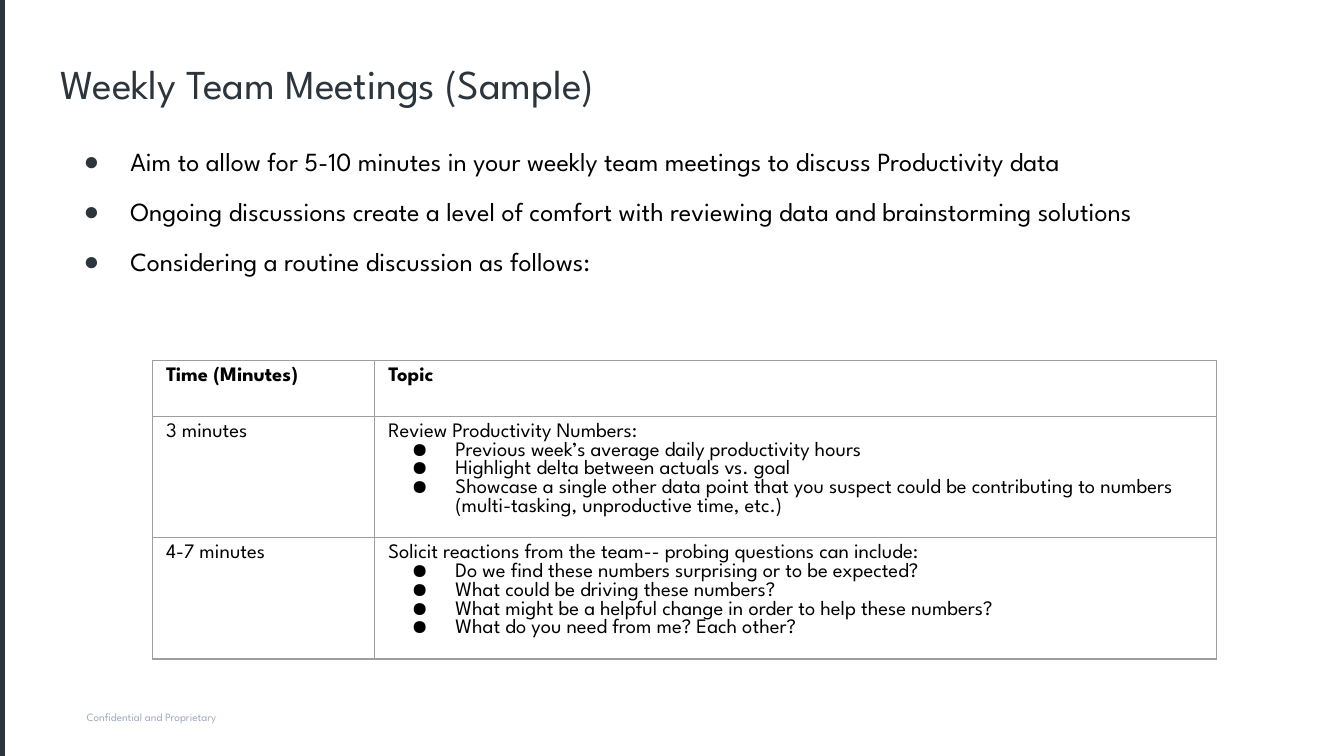
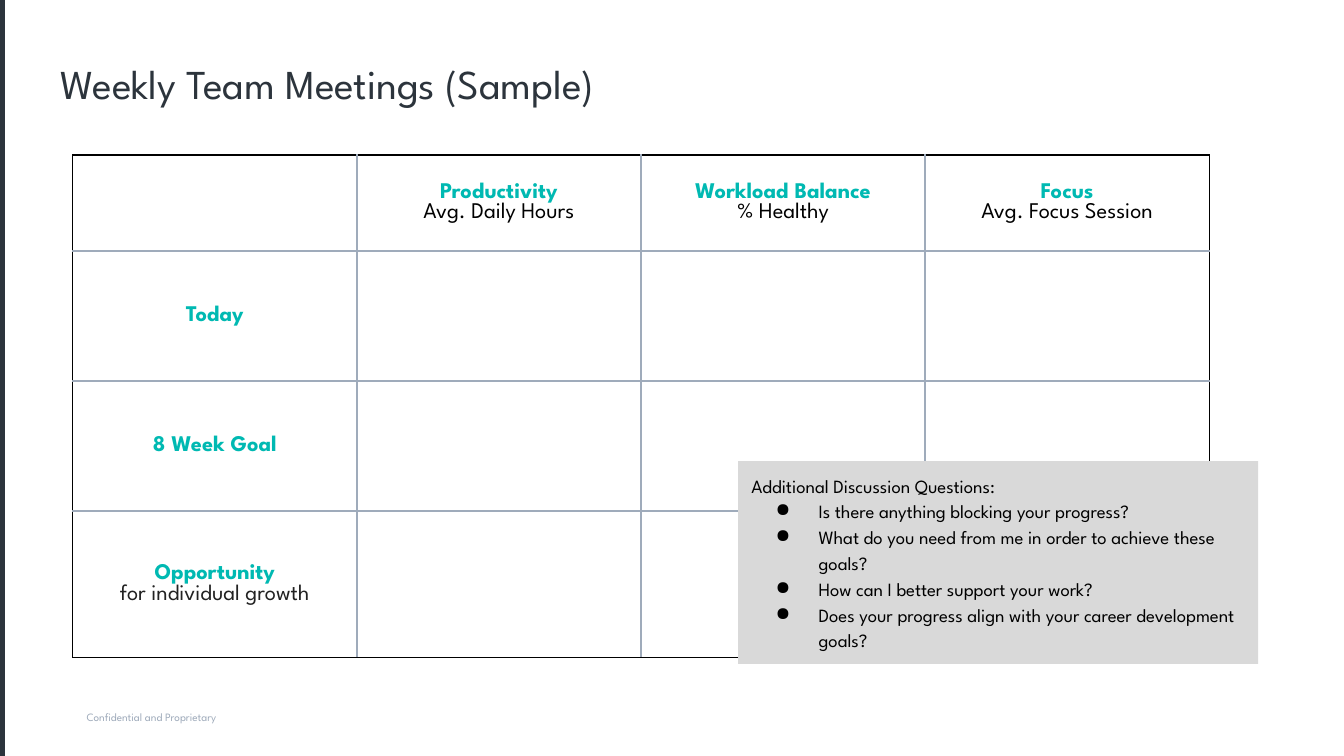
from dataclasses import dataclass

from lxml import etree
from pptx import Presentation
from pptx.dml.color import RGBColor
from pptx.enum import shapes, text
from pptx.oxml import ns
from pptx.util import Pt


@dataclass(frozen=True)
class Theme:
    font: str = "League Spartan"
    ink: str = "2C343C"
    black: str = "000000"
    soft: str = "222222"
    teal: str = "00B9B2"
    mist: str = "9FABBB"
    grey: str = "9E9E9E"
    panel: str = "D9D9D9"
    title: int = 22
    body: int = 14
    grid: int = 12
    cell: int = 11
    note: int = 10
    foot: int = 6


T = Theme()


def write(frame, lines, size, color, pads, hang=0, dot=T.black):
    """Fill a frame; lines that start with a bullet mark hang by the given indent."""
    frame.word_wrap = True
    for i, line in enumerate(lines):
        para = frame.paragraphs[0] if i == 0 else frame.add_paragraph()
        para.space_before = para.space_after = Pt(0)
        props = para._p.get_or_add_pPr()
        if line.startswith("●"):
            line = line[1:]
            props.set("marL", str(Pt(36)))
            props.set("indent", str(Pt(-hang)))
            tint = etree.SubElement(props, ns.qn("a:buClr"))
            etree.SubElement(tint, ns.qn("a:srgbClr"), val=dot)
            etree.SubElement(props, ns.qn("a:buChar"), char="●")
        else:
            props.set("marL", "0")
            props.set("indent", "0")
            etree.SubElement(props, ns.qn("a:buNone"))
        para.text = line
        para.font.name, para.font.size = T.font, Pt(size)
        para.font.color.rgb = RGBColor.from_string(color)
    (frame.margin_left, frame.margin_top,
     frame.margin_right, frame.margin_bottom) = map(Pt, pads)


def table(slide, left, top, cols, rows, edge):
    """Add a plain table; edge(row, col, side) gives each border's colour and width."""
    grid = slide.shapes.add_table(len(rows), len(cols), Pt(left), Pt(top),
                                  Pt(sum(cols)), Pt(sum(rows))).table
    grid.first_row = grid.horz_banding = False
    for c, wide in enumerate(cols):
        grid.columns[c].width = Pt(wide)
    for r, high in enumerate(rows):
        grid.rows[r].height = Pt(high)
        for c in range(len(cols)):
            props = grid.cell(r, c)._tc.get_or_add_tcPr()
            for side in "LRTB":
                color, width = edge(r, c, side)
                line = etree.SubElement(props, ns.qn(f"a:ln{side}"), w=str(Pt(width)))
                fill = etree.SubElement(line, ns.qn("a:solidFill"))
                etree.SubElement(fill, ns.qn("a:srgbClr"), val=color)
            grid.cell(r, c).fill.background()
    return grid


deck = Presentation()
deck.slide_width, deck.slide_height = Pt(720), Pt(405)
plan = deck.slides.add_slide(deck.slide_layouts[1])
goals = deck.slides.add_slide(deck.slide_layouts[5])

# Shared band and footer, kept on the master
band = plan.shapes.add_shape(shapes.MSO_SHAPE.RECTANGLE, Pt(0), Pt(0), Pt(2.7), Pt(405))
band.shadow.inherit = False
band.fill.solid()
band.fill.fore_color.rgb = RGBColor.from_string(T.ink)
band.line.fill.background()
foot = plan.shapes.add_textbox(Pt(41.4), Pt(377.5), Pt(160), Pt(18.7))
write(foot.text_frame, ["Confidential and Proprietary"], T.foot, T.mist, (5, 3, 5, 3))
for item in (band, foot):
    deck.slide_master.shapes._spTree.append(item._element)

for slide in (plan, goals):
    head = slide.shapes.title
    head.left, head.top, head.width, head.height = Pt(28), Pt(29.5), Pt(663), Pt(36)
    write(head.text_frame, ["Weekly Team Meetings (Sample)"], T.title, T.ink, (4.5, 2, 4.5, 0))
    head.text_frame.vertical_anchor = text.MSO_ANCHOR.TOP
    head.text_frame.paragraphs[0].alignment = text.PP_ALIGN.LEFT

# Slide 1: meeting plan
body = plan.placeholders[1]
body.left, body.top, body.width, body.height = Pt(26.6), Pt(70.6), Pt(608), Pt(119.5)
write(body.text_frame, [
    "●Aim to allow for 5-10 minutes in your weekly team meetings to discuss Productivity data",
    "●Ongoing discussions create a level of comfort with reviewing data and brainstorming solutions",
    "●Considering a routine discussion as follows:",
], T.body, T.black, (7.2,) * 4, 25, T.ink)
for para in body.text_frame.paragraphs[1:]:
    para.space_before = Pt(10)

agenda = [
    (["Time (Minutes)"], ["Topic"]),
    (["3 minutes"], [
        "Review Productivity Numbers:",
        "●Previous week’s average daily productivity hours",
        "●Highlight delta between actuals vs. goal",
        "●Showcase a single other data point that you suspect could be contributing to numbers "
        "(multi-tasking, unproductive time, etc.)"]),
    (["4-7 minutes"], [
        "Solicit reactions from the team-- probing questions can include:",
        "●Do we find these numbers surprising or to be expected?",
        "●What could be driving these numbers?",
        "●What might be a helpful change in order to help these numbers?",
        "●What do you need from me? Each other?"]),
]
grid = table(plan, 81.8, 193, (119, 451), (30, 65, 65), lambda r, c, side: (T.grey, 0.75))
for r, row in enumerate(agenda):
    for c, lines in enumerate(row):
        cell = grid.cell(r, c)
        write(cell.text_frame, lines, T.cell, T.black, (7.2,) * 4, 23.5)
        cell.text_frame.paragraphs[0].font.bold = r == 0

# Slide 2: goal sheet
labels = {
    (0, 1): ["Productivity", "Avg. Daily Hours"],
    (0, 2): ["Workload Balance", "% Healthy"],
    (0, 3): ["Focus", "Avg. Focus Session"],
    (1, 0): ["Today"],
    (2, 0): ["8 Week Goal"],
    (3, 0): ["Opportunity", "for individual growth"],
}
rim = {"L": (1, 0), "R": (1, 3), "T": (0, 0), "B": (0, 3)}


def edge(r, c, side):
    axis, last = rim[side]
    return (T.black, 0.75) if (r, c)[axis] == last else (T.mist, 1)


grid = table(goals, 39, 83, (152.2,) * 4, (51.5, 69.7, 69.7, 78.5), edge)
for (r, c), lines in labels.items():
    cell = grid.cell(r, c)
    write(cell.text_frame, lines, T.grid, T.soft if r else T.black, (5,) * 4)
    cell.vertical_anchor = text.MSO_ANCHOR.MIDDLE
    for para in cell.text_frame.paragraphs:
        para.alignment = text.PP_ALIGN.CENTER
    lead = cell.text_frame.paragraphs[0].font
    lead.bold, lead.color.rgb = True, RGBColor.from_string(T.teal)

panel = goals.shapes.add_shape(shapes.MSO_SHAPE.RECTANGLE, Pt(395.5), Pt(247), Pt(278.6), Pt(108.7))
panel.shadow.inherit = False
panel.fill.solid()
panel.fill.fore_color.rgb = RGBColor.from_string(T.panel)
panel.line.fill.background()
write(panel.text_frame, [
    "Additional Discussion Questions:",
    "●Is there anything blocking your progress?",
    "●What do you need from me in order to achieve these goals?",
    "●How can I better support your work?",
    "●Does your progress align with your career development goals?",
], T.note, T.black, (7.2,) * 4, 23)
panel.text_frame.vertical_anchor = text.MSO_ANCHOR.TOP
for i, para in enumerate(panel.text_frame.paragraphs):
    para.alignment = text.PP_ALIGN.LEFT
    para.line_spacing = 1.15 if i else 1

deck.save("out.pptx")
